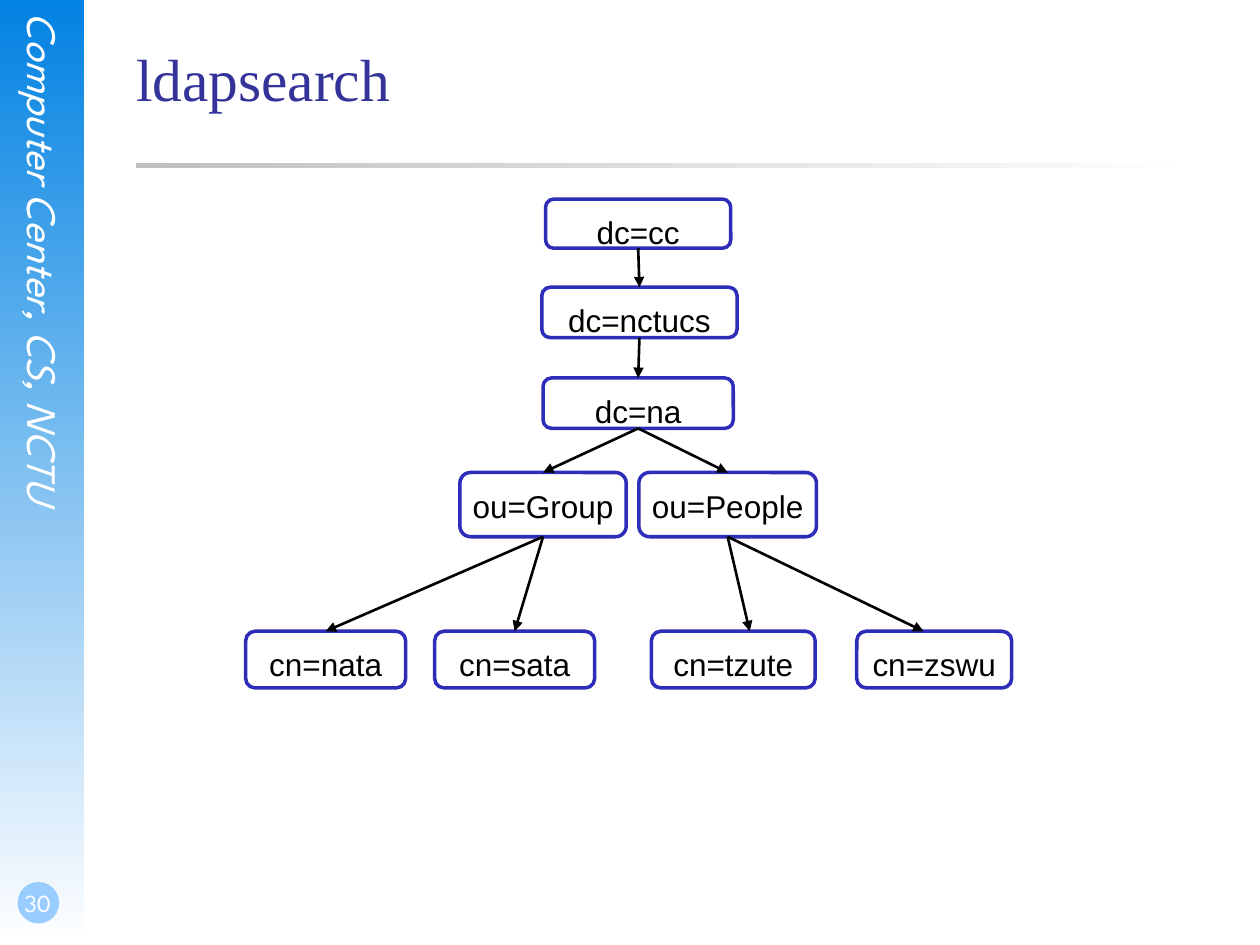
from dataclasses import dataclass
from typing import Optional

from lxml.etree import SubElement
from pptx import Presentation
from pptx.dml.color import RGBColor
from pptx.enum.shapes import MSO_CONNECTOR, MSO_SHAPE
from pptx.enum.text import MSO_ANCHOR, PP_ALIGN
from pptx.oxml.ns import qn
from pptx.util import Inches, Pt

WHITE = RGBColor(0xFF, 0xFF, 0xFF)
BLACK = RGBColor(0, 0, 0)
SKY = RGBColor(0x02, 0x82, 0xE2)
PALE_BLUE = RGBColor(0x99, 0xCC, 0xFF)
SILVER = RGBColor(0xC0, 0xC0, 0xC0)
INDIGO = RGBColor(0x33, 0x33, 0x99)
NODE_BLUE = RGBColor(0x2D, 0x2D, 0xB9)

prs = Presentation()
prs.slide_width, prs.slide_height = Inches(10), Inches(7.5)
COL, ROW = prs.slide_width / 100, prs.slide_height / 75


@dataclass
class Level:
    top: float
    height: float


@dataclass
class Node:
    label: str
    level: int
    left: float
    width: float
    parent: Optional[str] = None
    entry: Optional[float] = None


LEVELS = [Level(15.8, 3.9), Level(22.8, 4), Level(30, 4), Level(37.5, 5.1), Level(50.1, 4.5)]
NODES = [
    Node("dc=cc", 0, 43.3, 14.7),
    Node("dc=nctucs", 1, 43, 15.5, "dc=cc"),
    Node("dc=na", 2, 43.1, 15.1, "dc=nctucs"),
    Node("ou=Group", 3, 36.5, 13.2, "dc=na"),
    Node("ou=People", 3, 50.7, 14.1, "dc=na"),
    Node("cn=nata", 4, 19.5, 12.7, "ou=Group"),
    Node("cn=sata", 4, 34.5, 12.7, "ou=Group"),
    Node("cn=tzute", 4, 51.7, 13, "ou=People", 59.5),
    Node("cn=zswu", 4, 68, 12.3, "ou=People", 73.3),
]


def box(left: float, top: float, width: float, height: float) -> tuple:
    return round(left * COL), round(top * ROW), round(width * COL), round(height * ROW)


def write(sp, text: str, size: float, font: str, color: RGBColor,
          align=PP_ALIGN.LEFT, italic: bool = False, **frame) -> None:
    tf = sp.text_frame
    settings = dict(word_wrap=True, vertical_anchor=MSO_ANCHOR.TOP,
                    margin_left=0, margin_top=0, margin_right=0, margin_bottom=0)
    for name, value in (settings | frame).items():
        setattr(tf, name, value)
    p = tf.paragraphs[0]
    p.alignment = align
    r = p.add_run()
    r.text = text
    for name, value in dict(size=Pt(size), name=font, italic=italic).items():
        setattr(r.font, name, value)
    r.font.color.rgb = color


def add_shape(s, kind, place: tuple, fill: RGBColor):
    sp = s.shapes.add_shape(kind, *place)
    sp.shadow.inherit = False
    sp.fill.solid()
    sp.fill.fore_color.rgb = fill
    sp.line.fill.background()
    return sp


def add_fade(s, place: tuple, color: RGBColor, angle: float) -> None:
    sp = add_shape(s, MSO_SHAPE.RECTANGLE, place, color)
    sp.fill.gradient()
    sp.fill.gradient_angle = angle
    for stop, rgb in zip(sp.fill.gradient_stops, (color, WHITE)):
        stop.color.rgb = rgb


def add_node(s, node: Node):
    level = LEVELS[node.level]
    place = box(node.left, level.top, node.width, level.height)
    sp = add_shape(s, MSO_SHAPE.ROUNDED_RECTANGLE, place, WHITE)
    sp.line.color.rgb = NODE_BLUE
    sp.line.width = Pt(2)
    write(sp, node.label, 18, "Arial", BLACK, PP_ALIGN.CENTER, word_wrap=False,
          margin_left=Inches(0.1), margin_right=Inches(0.1), margin_top=Inches(0.09))
    return sp


def add_arrow(s, parent, child, entry: Optional[float]) -> None:
    end_x = child.left + child.width // 2 if entry is None else round(entry * COL)
    line = s.shapes.add_connector(
        MSO_CONNECTOR.STRAIGHT, parent.left + parent.width // 2,
        parent.top + parent.height, end_x, child.top)
    line.begin_connect(parent, 2)
    if entry is None:
        line.end_connect(child, 0)
    line.line.color.rgb = BLACK
    line.line.width = Pt(1.5)
    SubElement(line.line._get_or_add_ln(), qn("a:tailEnd"), type="triangle")
    SubElement(line._element.spPr, qn("a:effectLst"))


def add_sidebar(s) -> None:
    add_fade(s, box(0, 0, 6.7, 75), SKY, 270)
    sp = s.shapes.add_textbox(*box(1.5, 1, 4, 51.1))
    write(sp, "Computer Center, CS, NCTU", 24, "League Spartan", WHITE, italic=True)
    sp.text_frame._txBody.bodyPr.set("vert", "eaVert")
    add_shape(s, MSO_SHAPE.OVAL, box(1.4, 70, 3.3, 3.3), PALE_BLUE)
    sp = s.shapes.add_textbox(*box(0, 68.3, 5.8, 5))
    write(sp, "30", 14, "League Spartan", WHITE, PP_ALIGN.CENTER,
          vertical_anchor=MSO_ANCHOR.BOTTOM,
          margin_left=Inches(0.02), margin_bottom=Inches(0.05))


def main() -> None:
    s = prs.slides.add_slide(prs.slide_layouts[5])
    add_sidebar(s)
    add_fade(s, box(10.8, 12.9, 85, 0.4), SILVER, 0)
    title = s.shapes.title
    title.left, title.top, title.width, title.height = box(10.8, 2.8, 85, 12.5)
    write(title, "ldapsearch", 34, "Times New Roman", INDIGO, margin_top=Inches(0.05))
    shapes = {node.label: add_node(s, node) for node in NODES}
    for node in NODES:
        if node.parent:
            add_arrow(s, shapes[node.parent], shapes[node.label], node.entry)
    prs.save("out.pptx")


if __name__ == "__main__":
    main()
